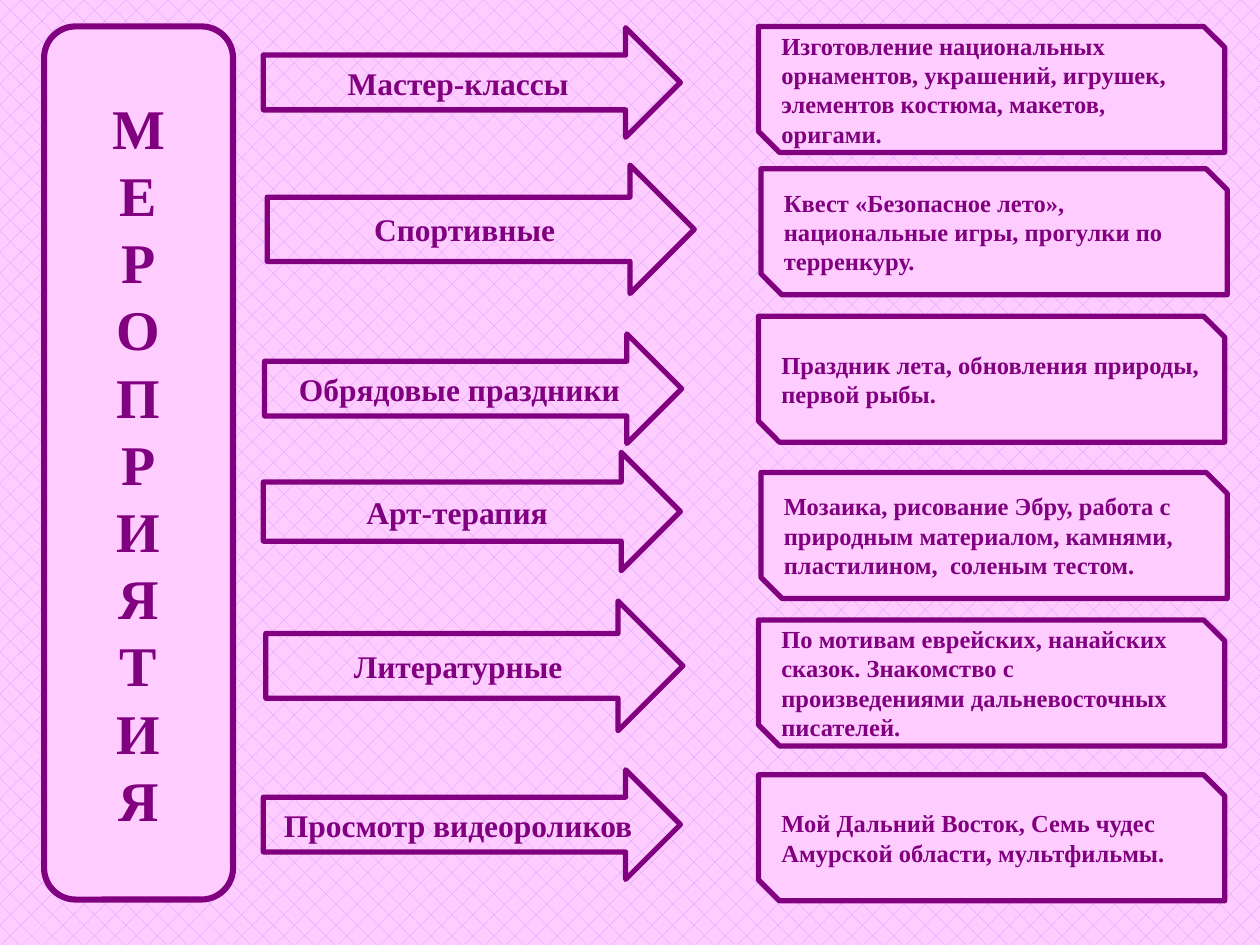
import pptx
import pptx.util
import pptx.dml.color
import pptx.enum.dml
import pptx.enum.shapes
import pptx.enum.text

COLORS = {"ink": "800080", "panel": "FFCCFF", "pattern": "CC99FF"}
FONT = "Times New Roman"
SHAPES = pptx.enum.shapes.MSO_SHAPE
ALIGN = pptx.enum.text.PP_ALIGN
TITLE = "МЕРОПРИЯТИЯ"
TITLE_BOX = (0.35, 0.21, 1.5, 6.93)
DETAIL_SIZE = (3.7, 1)

ACTIVITIES = [
    ("Мастер-классы", (2.09, 0.22, 3.31, 0.87), (6.02, 0.21),
     "Изготовление национальных орнаментов, украшений, игрушек, элементов костюма, макетов, оригами."),
    ("Спортивные", (2.12, 1.31, 3.39, 1.02), (6.04, 1.34),
     "Квест «Безопасное лето»,  национальные игры, прогулки по терренкуру."),
    ("Обрядовые праздники", (2.1, 2.65, 3.31, 0.87), (6.02, 2.51),
     "Праздник лета, обновления природы, первой рыбы."),
    ("Арт-терапия", (2.09, 3.59, 3.31, 0.94), (6.04, 3.75),
     "Мозаика, рисование Эбру, работа с природным материалом, камнями, пластилином,  соленым тестом."),
    ("Литературные", (2.11, 4.77, 3.31, 1.03), (6.02, 4.92),
     "По мотивам еврейских, нанайских сказок. Знакомство с произведениями дальневосточных писателей."),
    ("Просмотр видеороликов", (2.09, 6.11, 3.31, 0.87), (6.02, 6.15),
     "Мой Дальний Восток, Семь чудес Амурской области, мультфильмы."),
]


def color(name):
    """Return the named colour."""
    return pptx.dml.color.RGBColor.from_string(COLORS[name])


def inches(box):
    """Convert a box from inches to slide units."""
    return [pptx.util.Inches(length) for length in box]


def format_shape(shape, text, size, alignment, line_width, fill=None):
    """Give a shape its text, outline and fill."""
    shape.shadow.inherit = False
    if fill:
        shape.fill.solid()
        shape.fill.fore_color.rgb = color(fill)
    else:
        shape.fill.background()
    shape.line.color.rgb = color("ink")
    shape.line.width = pptx.util.Pt(line_width)
    frame = shape.text_frame
    frame.text = text
    frame.word_wrap = True
    frame.vertical_anchor = pptx.enum.text.MSO_ANCHOR.MIDDLE
    paragraph = frame.paragraphs[0]
    paragraph.alignment = alignment
    font = paragraph.runs[0].font
    font.name = FONT
    font.size = pptx.util.Pt(size)
    font.bold = True
    font.color.rgb = color("ink")


def paint_background(slide):
    """Fill the slide with the dotted diamond pattern."""
    fill = slide.background.fill
    fill.patterned()
    fill.pattern = pptx.enum.dml.MSO_PATTERN.DOTTED_DIAMOND
    fill.fore_color.rgb = color("pattern")
    fill.back_color.rgb = color("panel")


def place_title(slide, box):
    """Place a rounded panel with the heading in stacked letters."""
    panel = slide.shapes.add_shape(SHAPES.ROUNDED_RECTANGLE, *inches(box))
    format_shape(panel, TITLE, 32, ALIGN.CENTER, 3.5, "panel")
    panel.text_frame._txBody.bodyPr.set("vert", "wordArtVert")


def place_arrow(slide, box, text):
    """Place an arrow naming a kind of activity."""
    arrow = slide.shapes.add_shape(SHAPES.RIGHT_ARROW, *inches(box))
    format_shape(arrow, text, 18, ALIGN.CENTER, 3)


def place_detail(slide, box, text):
    """Place a snipped card describing an activity."""
    card = slide.shapes.add_shape(SHAPES.SNIP_2_DIAG_RECTANGLE, *inches(box))
    format_shape(card, text, 14, ALIGN.LEFT, 3, "panel")


def main():
    """Build and save the presentation."""
    presentation = pptx.Presentation()
    presentation.slide_width, presentation.slide_height = inches((10, 7.5))
    slide = presentation.slides.add_slide(presentation.slide_layouts[6])
    paint_background(slide)
    place_title(slide, TITLE_BOX)
    for name, arrow_box, corner, detail in ACTIVITIES:
        place_arrow(slide, arrow_box, name)
        place_detail(slide, corner + DETAIL_SIZE, detail)
    presentation.save("out.pptx")


if __name__ == "__main__":
    main()
